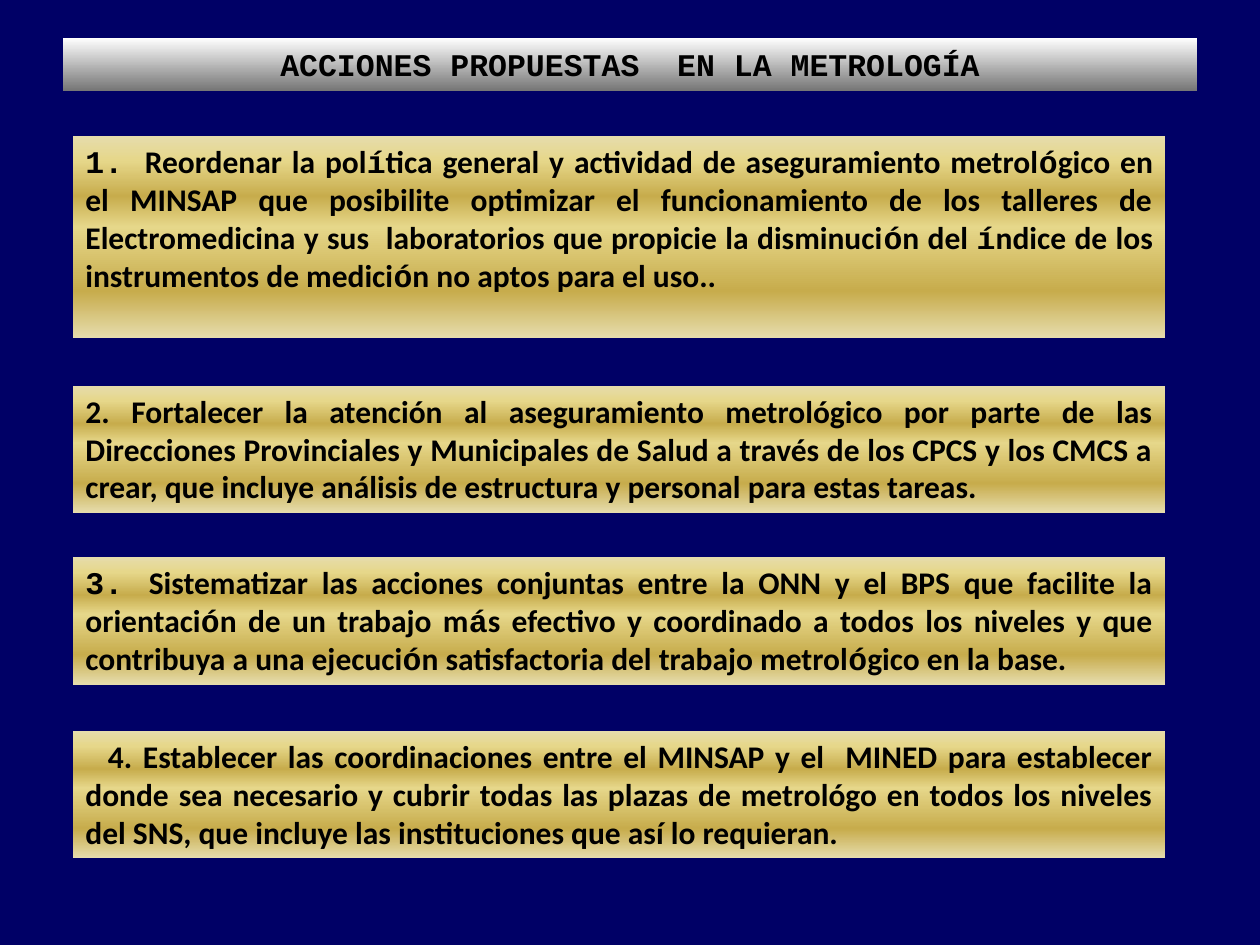
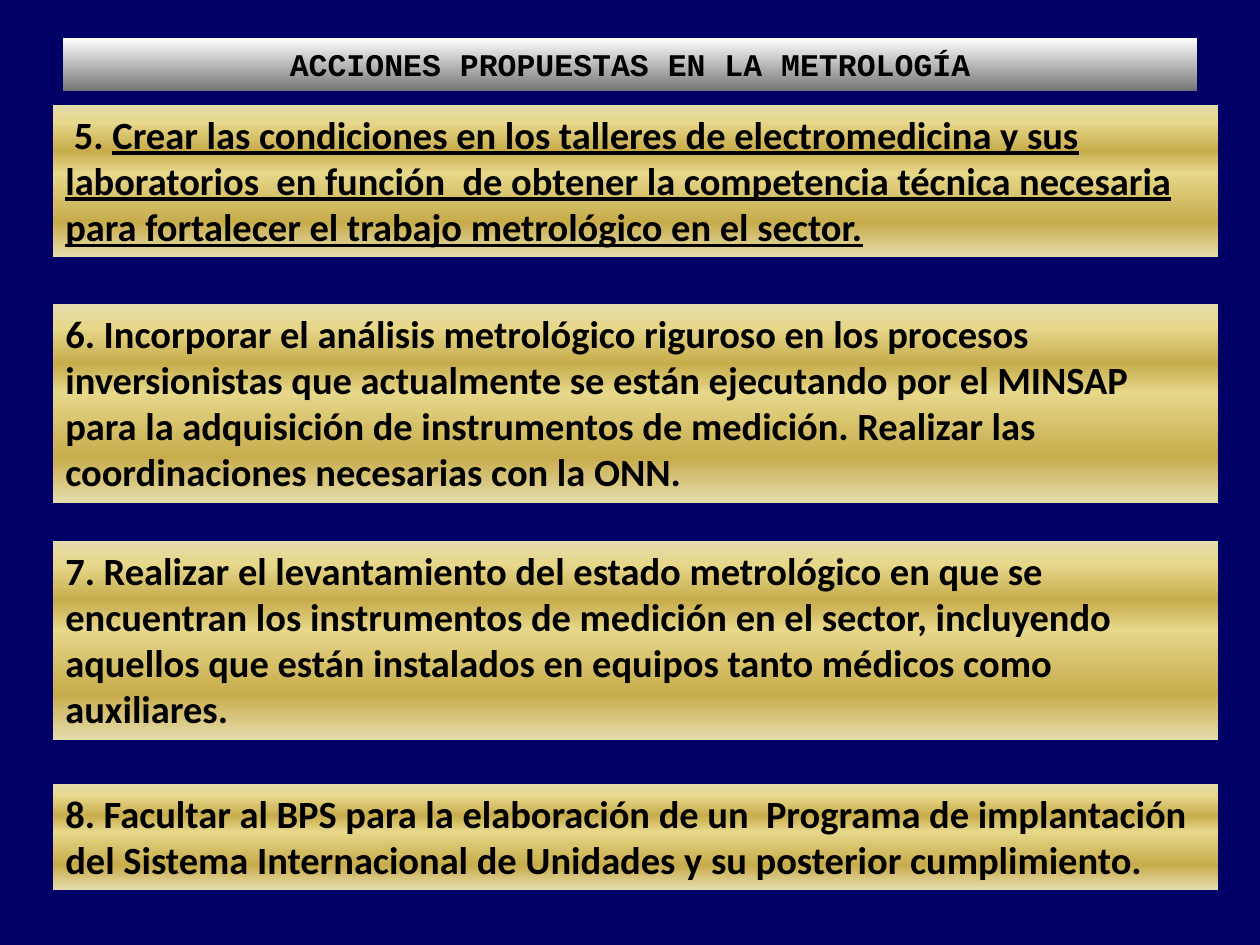
from lxml import etree
from pptx import Presentation
from pptx.dml.color import RGBColor
from pptx.enum.shapes import MSO_SHAPE
from pptx.enum.text import MSO_ANCHOR, MSO_AUTO_SIZE, PP_ALIGN
from pptx.oxml.ns import qn
from pptx.util import Inches, Pt

RECTANGLE = MSO_SHAPE.RECTANGLE
TOP, MIDDLE = MSO_ANCHOR.TOP, MSO_ANCHOR.MIDDLE
NO_AUTOFIT = MSO_AUTO_SIZE.NONE
LEFT, CENTER, JUSTIFY = PP_ALIGN.LEFT, PP_ALIGN.CENTER, PP_ALIGN.JUSTIFY

NAVY = RGBColor(0x00, 0x00, 0x66)
BLACK = RGBColor(0x00, 0x00, 0x00)
WHITE = RGBColor(0xFF, 0xFF, 0xFF)
GREY = RGBColor(0x76, 0x76, 0x76)
CREAM = RGBColor(0xE6, 0xDC, 0xAC)
PALE_GOLD = RGBColor(0xE6, 0xD7, 0x8A)
GOLD = RGBColor(0xC7, 0xAC, 0x4C)

SILVER_STOPS = [(0, WHITE), (100, GREY)]
GOLD_STOPS = [(0, CREAM), (12, PALE_GOLD), (30, GOLD),
              (45, PALE_GOLD), (77, GOLD), (100, CREAM)]

MONO = {"name": "Courier New"}
SANS = {"name": "Calibri"}
UNDERLINED = {"name": "Calibri", "underline": True}

# A bar in the wording switches between the two fonts of the slide.
FIRST_ACTIONS = [
    (1.08, 1.6, "1. |Reordenar la pol|í|tica general y actividad de aseguramiento "
     "metrol|ó|gico en el MINSAP que posibilite optimizar el funcionamiento de los "
     "talleres de Electromedicina y sus  laboratorios que propicie la disminuci|ó|n "
     "del |í|ndice de los instrumentos de medici|ó|n no aptos para el uso.."),
    (3.06, 1.01, "|2. Fortalecer la atención al aseguramiento metrológico por parte "
     "de las Direcciones Provinciales y Municipales de Salud a través de los CPCS y "
     "los CMCS a crear, que incluye análisis de estructura y personal para estas "
     "tareas."),
    (4.42, 1.01, "3. |Sistematizar las acciones conjuntas entre la ONN y el BPS que "
     "facilite la orientaci|ó|n de un trabajo m|á|s efectivo y coordinado a todos "
     "los niveles y que contribuya a una ejecuci|ó|n satisfactoria del trabajo "
     "metrol|ó|gico en la base."),
    (5.8, 1.01, " |4. Establecer las coordinaciones entre el MINSAP y el  MINED para "
     "establecer donde sea necesario y cubrir todas las plazas de metrológo en todos "
     "los niveles del SNS, que incluye las instituciones que así lo requieran."),
]
LAST_ACTIONS = [
    (0.83, 1.21, " 5. |Crear las condiciones en los talleres de electromedicina y "
     "sus laboratorios  en función  de obtener la competencia técnica necesaria para "
     "fortalecer el trabajo metrológico en el sector."),
    (2.41, 1.58, "6. Incorporar el análisis metrológico riguroso en los procesos "
     "inversionistas que actualmente se están ejecutando por el MINSAP para la "
     "adquisición de instrumentos de medición. Realizar las coordinaciones "
     "necesarias con la ONN."),
    (4.29, 1.58, "7. Realizar el levantamiento del estado metrológico en que se "
     "encuentran los instrumentos de medición en el sector, incluyendo aquellos que "
     "están instalados en equipos tanto médicos como auxiliares."),
    (6.22, 0.84, "8. Facultar al BPS para la elaboración de un  Programa de "
     "implantación del Sistema Internacional de Unidades y su posterior "
     "cumplimiento."),
]


def apply_format(target, values):
    for name, value in values.items():
        setattr(target, name, value)


def fill_gradient(shape, stops):
    """Fill the shape from top to bottom with (percent, colour) stops."""
    shape.fill.gradient()
    shape.fill.gradient_angle = 270
    stop_list = shape.element.spPr.find(".//" + qn("a:gsLst"))
    for old_stop in list(stop_list):
        stop_list.remove(old_stop)
    for percent, color in stops:
        stop = etree.SubElement(stop_list, qn("a:gs"), pos=str(percent * 1000))
        etree.SubElement(stop, qn("a:srgbClr"), val=str(color))


def write_text(shape, text, size, alignment, anchor, fonts):
    """Write one paragraph whose bar-separated pieces alternate between fonts."""
    frame = shape.text_frame
    apply_format(frame, {"word_wrap": True, "auto_size": NO_AUTOFIT,
                         "vertical_anchor": anchor})
    para = frame.paragraphs[0]
    para.alignment = alignment
    for index, piece in enumerate(text.split("|")):
        if piece:
            span = para.add_run()
            span.text = piece
            span.font.color.rgb = BLACK
            apply_format(span.font, {"size": Pt(size), "bold": True,
                                     **fonts[index % 2]})


def add_title_slide(deck, text):
    page = deck.slides.add_slide(deck.slide_layouts[5])
    title = page.shapes.title
    apply_format(title, {"left": Inches(0.5), "top": Inches(0.3),
                         "width": Inches(9), "height": Inches(0.42)})
    fill_gradient(title, SILVER_STOPS)
    write_text(title, text, 18, CENTER, MIDDLE, [MONO, MONO])
    return page


def add_action_boxes(page, actions, left, width, size, alignment, fonts):
    for top, height, text in actions:
        box = page.shapes.add_shape(RECTANGLE, Inches(left), Inches(top),
                                    Inches(width), Inches(height))
        box.shadow.inherit = False
        box.line.fill.background()
        fill_gradient(box, GOLD_STOPS)
        write_text(box, text, size, alignment, TOP, fonts)


def main():
    deck = Presentation()
    deck.slide_width, deck.slide_height = Inches(10), Inches(7.5)
    background = deck.slide_master.background.fill
    background.solid()
    background.fore_color.rgb = NAVY

    page = add_title_slide(deck, "ACCIONES PROPUESTAS  EN LA METROLOGÍA")
    add_action_boxes(page, FIRST_ACTIONS, 0.58, 8.67, 18, JUSTIFY, [MONO, SANS])

    page = add_title_slide(deck, "ACCIONES PROPUESTAS EN LA METROLOGÍA")
    add_action_boxes(page, LAST_ACTIONS, 0.42, 9.25, 22, LEFT, [SANS, UNDERLINED])

    deck.save("out.pptx")


if __name__ == "__main__":
    main()
